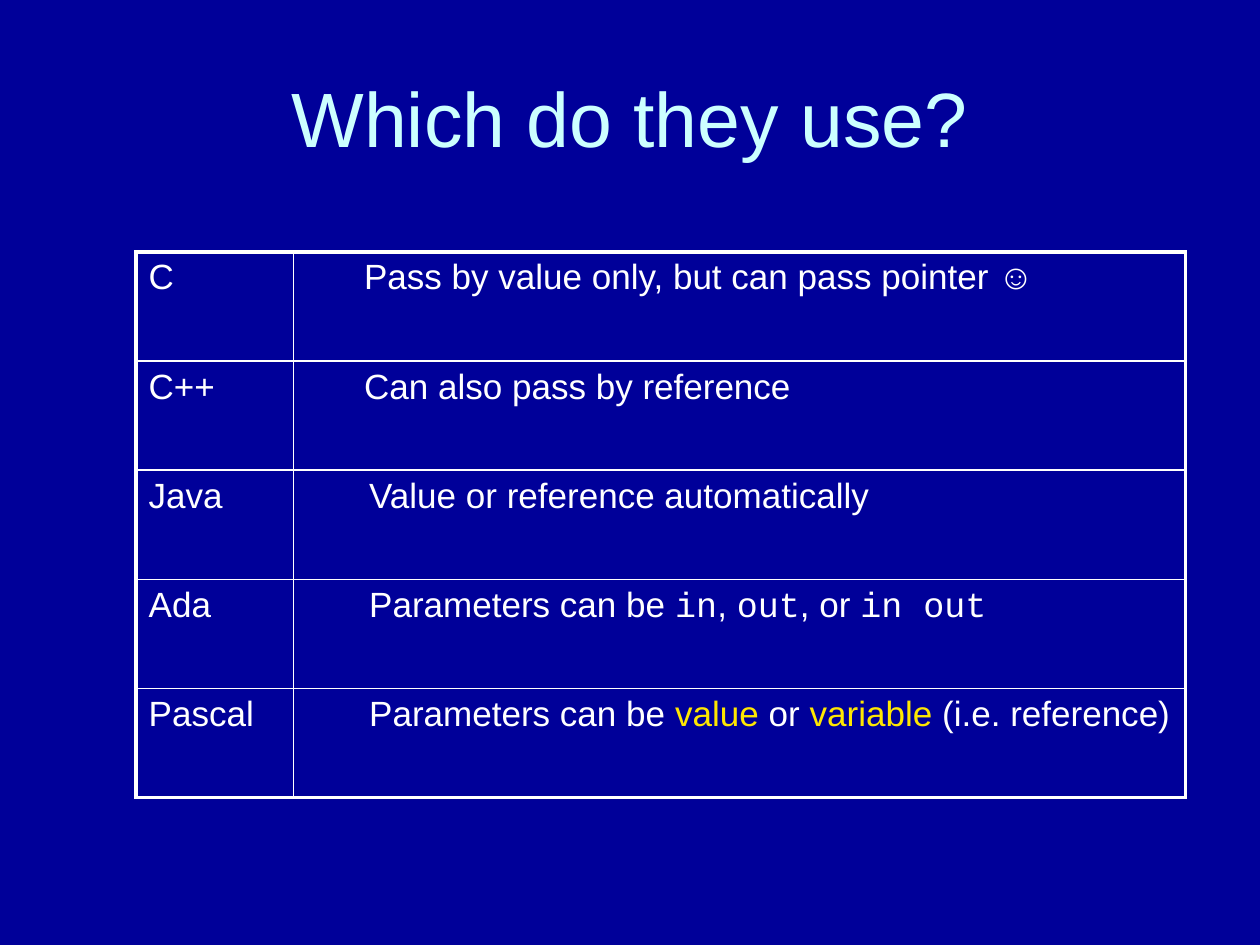
from lxml.etree import SubElement
from pptx import Presentation
from pptx.dml.color import RGBColor
from pptx.enum.text import MSO_ANCHOR, PP_ALIGN
from pptx.oxml.ns import qn
from pptx.util import Inches, Pt

NAVY, WHITE, ICE, YELLOW = "000099", "FFFFFF", "CCFFFF", "FFE701"
CODE = {"font": "Courier New"}
KEY = {"color": YELLOW}
THIN, THICK = 1, 2.25

# Language, left indent of the description, description runs
LANGUAGES = [
    ("C", 0.46, [("Pass by value only, but can pass pointer ☺", {})]),
    ("C++", 0.46, [("Can also pass by reference", {})]),
    ("Java", 0.5, [("Value or reference automatically", {})]),
    ("Ada", 0.5, [("Parameters can be ", {}), ("in", CODE), (", ", {}),
                  ("out", CODE), (", or ", {}), ("in out", CODE)]),
    ("Pascal", 0.5, [("Parameters can be ", {}), ("value", KEY), (" or ", {}),
                     ("variable ", KEY), ("(i.e. reference)", {})]),
]


def rgb(color):
    return RGBColor.from_string(color)


def add_text(p, text, size=20, font="Arial", color=WHITE):
    r = p.add_run()
    r.text = text
    r.font.size = Pt(size)
    r.font.name = font
    r.font.bold = False
    r.font.color.rgb = rgb(color)


def set_borders(cell, **widths):
    """Draw white cell borders; widths are given in points as L, R, T, B."""
    tc_pr = cell._tc.get_or_add_tcPr()
    for side in "LRTB":
        ln = SubElement(tc_pr, qn(f"a:ln{side}"), w=str(Pt(widths[side])))
        fill = SubElement(ln, qn("a:solidFill"))
        SubElement(fill, qn("a:srgbClr"), val=WHITE)


def add_title(s, left, top, width, height):
    sp = s.shapes.add_textbox(left, top, width, height)
    tf = sp.text_frame
    tf.word_wrap = True
    tf.vertical_anchor = MSO_ANCHOR.MIDDLE
    p = tf.paragraphs[0]
    p.alignment = PP_ALIGN.CENTER
    add_text(p, "Which do they use?", size=44, color=ICE)


def add_language_table(s, left, top, width, height):
    last = len(LANGUAGES) - 1
    table = s.shapes.add_table(last + 1, 2, left, top, width, height).table
    table.first_row = table.horz_banding = False
    table.columns[0].width = Inches(1.25)
    table.columns[1].width = width - Inches(1.25)

    for i, (language, indent, runs) in enumerate(LANGUAGES):
        name, description = table.cell(i, 0), table.cell(i, 1)
        add_text(name.text_frame.paragraphs[0], language)
        p = description.text_frame.paragraphs[0]
        p._p.get_or_add_pPr().set("marL", str(Inches(indent)))
        for text, style in runs:
            add_text(p, text, **style)

        # Thick outer frame, thin inner rules
        edges = {"T": THICK if i == 0 else THIN, "B": THICK if i == last else THIN}
        set_borders(name, L=THICK, R=THIN, **edges)
        set_borders(description, L=THIN, R=THICK, **edges)
        for cell in (name, description):
            cell.fill.background()


def main():
    prs = Presentation()
    prs.slide_width, prs.slide_height = Inches(10), Inches(7.5)
    s = prs.slides.add_slide(prs.slide_layouts[6])
    s.background.fill.solid()
    s.background.fill.fore_color.rgb = rgb(NAVY)
    add_title(s, Inches(0.5), Inches(0.3), Inches(9), Inches(1.25))
    add_language_table(s, Inches(1.08), Inches(2), Inches(8.33), Inches(4.33))
    prs.save("out.pptx")


if __name__ == "__main__":
    main()
